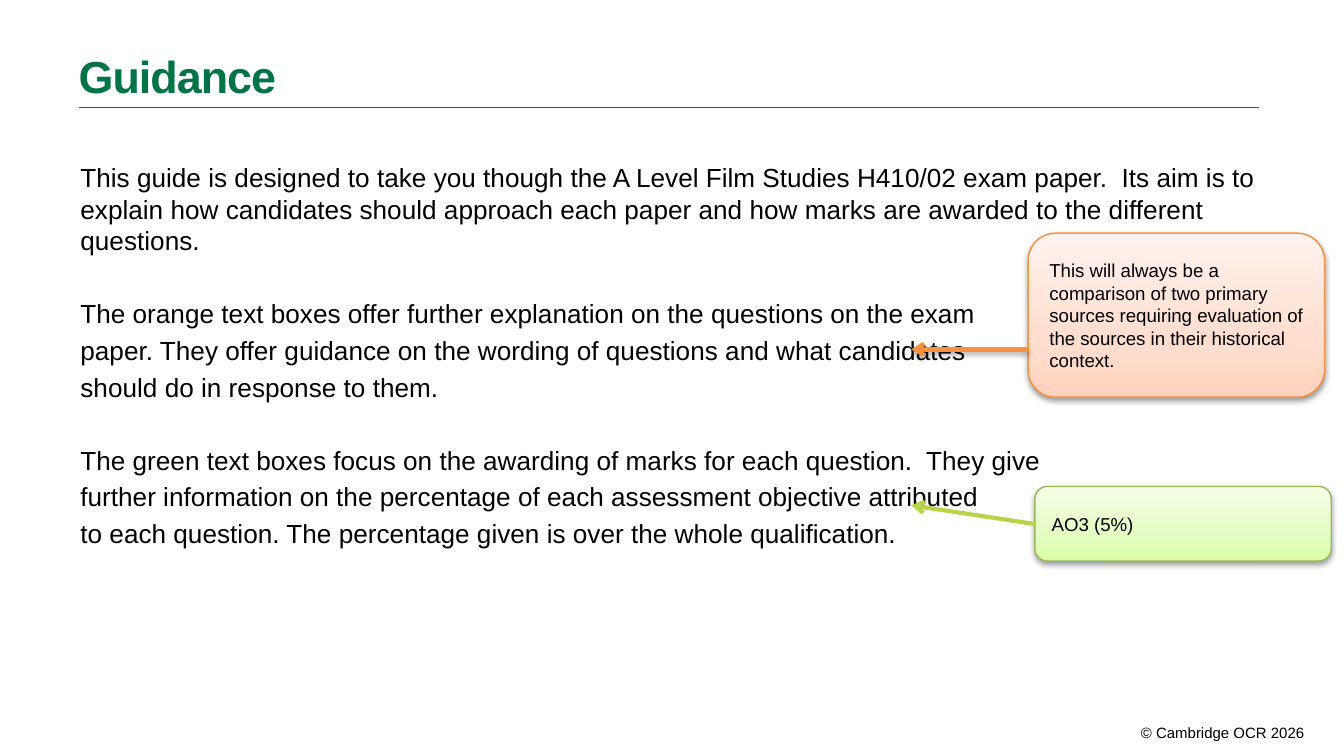
"""Build the exam guidance slide with its two callouts."""
import dataclasses
import typing

import pptx
import pptx.dml.color
import pptx.enum.shapes
import pptx.enum.text
import pptx.oxml
import pptx.oxml.ns
import pptx.util

SCALE = 4572
FONT = "Arial"
HUES = {
    "black": "000000",
    "brand": "007349",
    "orange": "F69240",
    "leaf": "98B955",
    "lime": "B7D448",
}
BODY = [
    (0, "This guide is designed to take you though the A Level Film Studies H410/02 exam paper.  "
        "Its aim is to explain how candidates should approach each paper and how marks are "
        "awarded to the different questions."),
    (22.4, "The orange text boxes offer further explanation on the questions on the exam"),
    (2.8, "paper. They offer guidance on the wording of questions and what candidates"),
    (2.8, "should do in response to them."),
    (22.4, "The green text boxes focus on the awarding of marks for each question.  They give"),
    (2.8, "further information on the percentage of each assessment objective attributed"),
    (2.8, "to each question. The percentage given is over the whole qualification."),
]


class Box(typing.NamedTuple):
    """Hold a left, top, width and height in px."""
    left: int
    top: int
    width: int
    height: int


@dataclasses.dataclass
class Arrow:
    """Hold the ends and look of an arrow."""
    start: tuple[int, int]
    end: tuple[int, int]
    hue: str
    shade: bool


@dataclasses.dataclass
class Callout:
    """Hold a rounded note and its arrow."""
    box: Box
    text: str
    edge: str
    stops: tuple[str, str, str]
    arrow: Arrow


NOTES = [
    Callout(Box(1530, 347, 441, 244),
            "This will always be a comparison of two primary sources requiring evaluation "
            "of the sources in their historical context.",
            "orange", ("FFD2BD", "FFDED0", "FFF2ED"),
            Arrow((1530, 520), (1356, 520), "orange", True)),
    Callout(Box(1540, 724, 441, 111), "AO3 (5%)",
            "leaf", ("DAFDA7", "E4FCC2", "F5FFE7"),
            Arrow((1541, 780), (1356, 752), "lime", False)),
]


def px(size: int) -> int:
    """Turn px into EMU."""
    return size * SCALE


def rgb(hue: str) -> pptx.dml.color.RGBColor:
    """Look up a named colour."""
    return pptx.dml.color.RGBColor.from_string(HUES[hue])


def node(xml: str):
    """Parse one drawing element."""
    head, tail = xml.split(" ", 1)
    return pptx.oxml.parse_xml(f"{head} {pptx.oxml.ns.nsdecls('a')} {tail}")


def style(para, size: int, hue: str = "black", bold: bool = False) -> None:
    """Format every run of a paragraph."""
    for run in para.runs:
        run.font.name = FONT
        run.font.size = pptx.util.Pt(size)
        run.font.bold = bold
        run.font.color.rgb = rgb(hue)


def shadow(effects) -> None:
    """Add a soft shadow below to an effect list."""
    effects.append(node(
        '<a:outerShdw blurRad="40000" dist="20000" dir="5400000" rotWithShape="0">'
        '<a:srgbClr val="000000"><a:alpha val="38000"/></a:srgbClr></a:outerShdw>'))


def add_line(slide, start: tuple[int, int], end: tuple[int, int],
             hue: str, weight: float):
    """Draw a plain straight line and return it with its effect list."""
    line = slide.shapes.add_connector(
        pptx.enum.shapes.MSO_CONNECTOR.STRAIGHT, *map(px, start + end))
    line.line.color.rgb = rgb(hue)
    line.line.width = pptx.util.Pt(weight)
    effects = node("<a:effectLst />")
    line._element.spPr.append(effects)
    return line, effects


def add_arrow(slide, arrow: Arrow) -> None:
    """Draw a line with a head at its end."""
    line, effects = add_line(slide, arrow.start, arrow.end, arrow.hue, 2.25)
    line.line._get_or_add_ln().append(node('<a:tailEnd type="arrow"/>'))
    if arrow.shade:
        shadow(effects)


def add_note(slide, note: Callout) -> None:
    """Draw a shaded rounded note and its arrow."""
    shape = slide.shapes.add_shape(
        pptx.enum.shapes.MSO_SHAPE.ROUNDED_RECTANGLE, *map(px, note.box))
    shape.fill.gradient()
    shape.fill.gradient_angle = 90
    stops = shape._element.spPr.find(".//" + pptx.oxml.ns.qn("a:gsLst"))
    stops.clear()
    for place, tint in zip((0, 35, 100), note.stops):
        stops.append(node(f'<a:gs pos="{place * 1000}"><a:srgbClr val="{tint}"/></a:gs>'))
    shape.line.color.rgb = rgb(note.edge)
    shape.line.width = pptx.util.Pt(0.75)
    shape.shadow.inherit = False
    shadow(shape._element.spPr.find(pptx.oxml.ns.qn("a:effectLst")))
    frame = shape.text_frame
    frame.word_wrap = True
    frame.vertical_anchor = pptx.enum.text.MSO_ANCHOR.MIDDLE
    frame.text = note.text
    frame.paragraphs[0].alignment = pptx.enum.text.PP_ALIGN.LEFT
    style(frame.paragraphs[0], 10)
    add_arrow(slide, note.arrow)


def add_title(slide, box: Box, text: str) -> None:
    """Place and format the title."""
    title = slide.shapes.title
    title.left, title.top, title.width, title.height = map(px, box)
    frame = title.text_frame
    frame.text = text
    frame.word_wrap = True
    frame.auto_size = pptx.enum.text.MSO_AUTO_SIZE.NONE
    frame.vertical_anchor = pptx.enum.text.MSO_ANCHOR.TOP
    frame.margin_left = frame.margin_top = frame.margin_right = frame.margin_bottom = 0
    para = frame.paragraphs[0]
    para.alignment = pptx.enum.text.PP_ALIGN.LEFT
    style(para, 24, "brand", True)
    para.runs[0].font._element.set("spc", "-50")


def add_text(slide, box: Box, lines: list[tuple[float, str]], size: int,
             align=pptx.enum.text.PP_ALIGN.LEFT) -> None:
    """Write paragraphs, each with its space before."""
    frame = slide.shapes.add_textbox(*map(px, box)).text_frame
    frame.word_wrap = True
    frame.text = "\n".join(text for _, text in lines)
    for para, (gap, _) in zip(frame.paragraphs, lines):
        para.alignment = align
        para.space_before = pptx.util.Pt(gap)
        style(para, size)


def main() -> None:
    """Build and save the deck."""
    deck = pptx.Presentation()
    deck.slide_width, deck.slide_height = px(2000), px(1125)
    slide = deck.slides.add_slide(deck.slide_layouts[5])
    add_line(slide, (117, 160), (1874, 160), "brand", 0.5)
    add_text(slide, Box(1583, 1067, 378, 47), [(0, "© Cambridge OCR 2026")], 8,
             pptx.enum.text.PP_ALIGN.RIGHT)
    add_title(slide, Box(117, 72, 1757, 80), "Guidance")
    add_text(slide, Box(100, 231, 1800, 936), BODY, 14)
    for note in NOTES:
        add_note(slide, note)
    deck.save("out.pptx")


if __name__ == "__main__":
    main()
